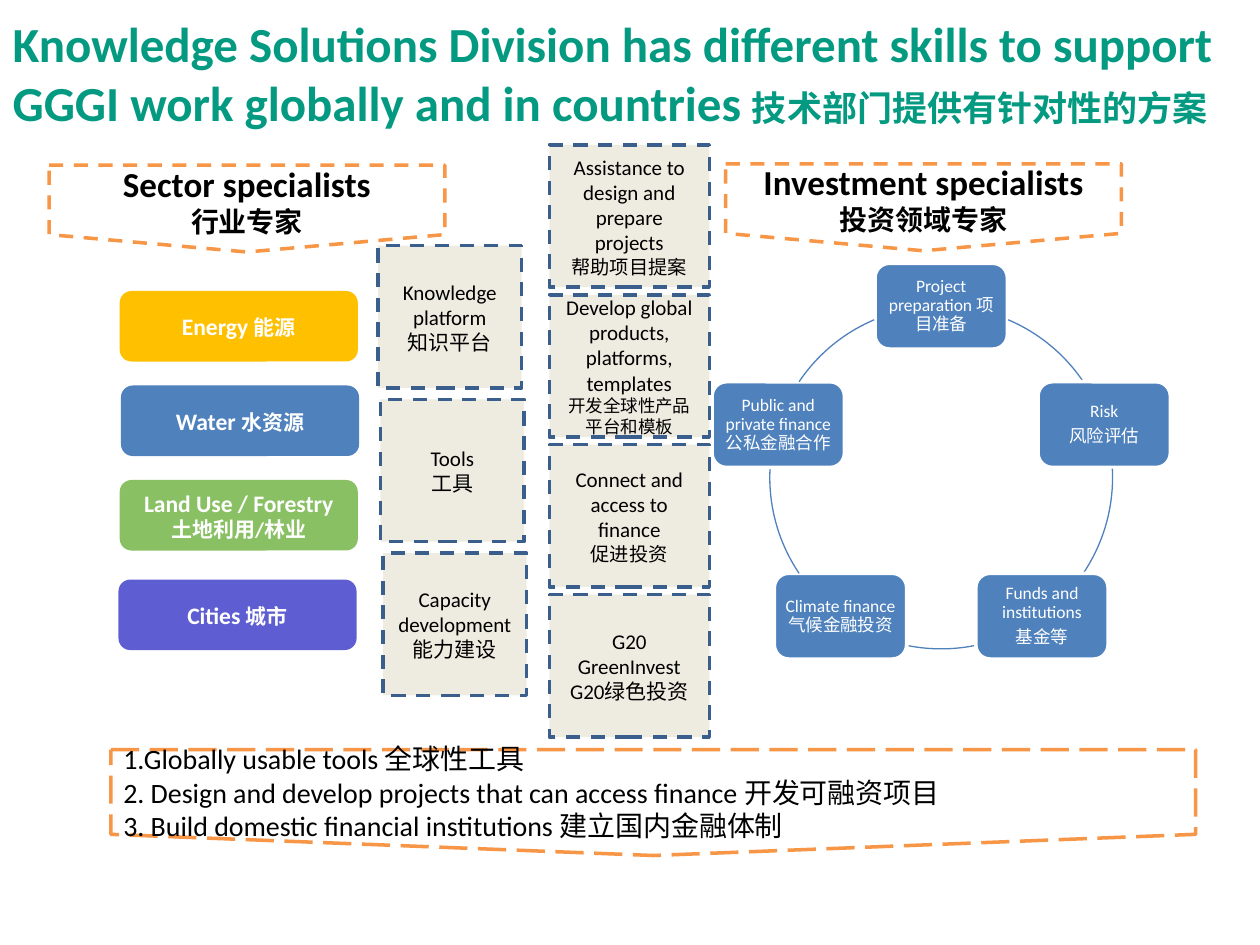
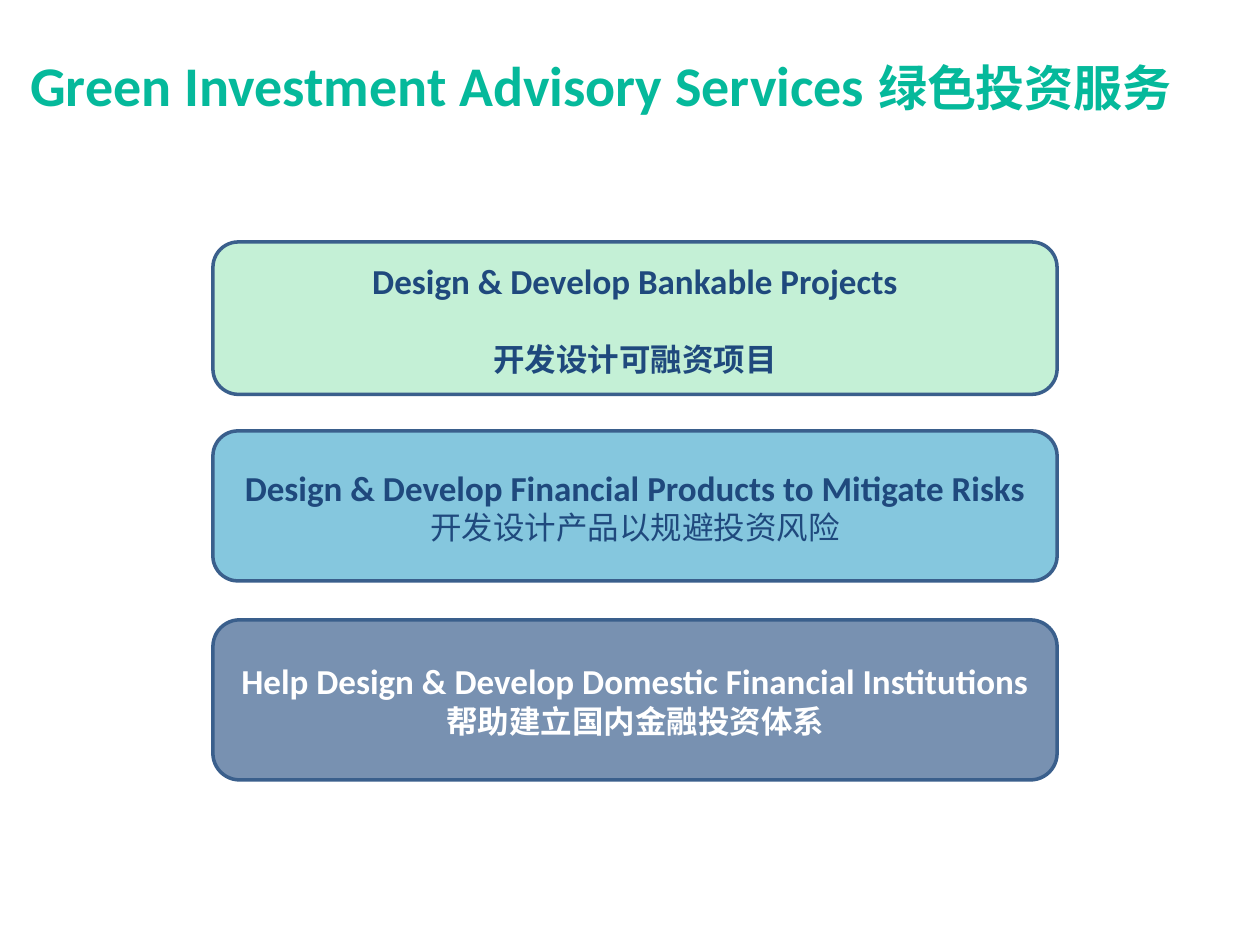
from math import cos, radians, sin

from lxml.etree import SubElement
from pptx import Presentation
from pptx.dml.color import RGBColor
from pptx.enum.dml import MSO_LINE
from pptx.enum.shapes import MSO_SHAPE
from pptx.enum.text import MSO_ANCHOR, MSO_AUTO_SIZE, PP_ALIGN
from pptx.oxml.ns import qn
from pptx.util import Inches, Pt

BLACK = RGBColor(0x00, 0x00, 0x00)
WHITE = RGBColor(0xFF, 0xFF, 0xFF)
TEAL = RGBColor(0x04, 0x9A, 0x81)
MINT = RGBColor(0x05, 0xB9, 0x9B)
ORANGE = RGBColor(0xF7, 0x96, 0x46)
BLUE = RGBColor(0x4F, 0x81, 0xBD)
NAVY = RGBColor(0x1F, 0x49, 0x7D)
EDGE = RGBColor(0x3A, 0x5F, 0x8C)
CREAM = RGBColor(0xEE, 0xEC, 0xE1)
AMBER = RGBColor(0xFF, 0xC0, 0x00)
GREEN = RGBColor(0x89, 0xC0, 0x64)
VIOLET = RGBColor(0x5E, 0x5E, 0xD2)
PALE_GREEN = RGBColor(0x9D, 0xE7, 0xBB)
SKY = RGBColor(0x35, 0xA2, 0xC9)

# Text is a list of paragraphs; a paragraph is a list of (text, size, changes) runs.
SKILLS_TITLE = [[
    ("Knowledge Solutions Division has different skills to support "
     "GGGI work globally and in countries ", 28),
    ("技术部门提供有针对性的方案", 20, {"name": "Lato"})]]
ADVISORY_TITLE = [[("Green Investment Advisory Services ", 32), ("绿色投资服务", 28)]]

GOALS = [
    [("1.Globally usable tools 全球性工具", 16)],
    [("2. Design and develop projects that can access finance 开发可融资项目", 16)],
    [("3. Build domestic financial institutions 建立国内金融体制", 16)],
]
SECTORS = [  # left, top, fill, text
    (0.95, 2.31, AMBER, [[("Energy ", 13.5), ("能源", 12)]]),
    (0.96, 3.06, BLUE, [[("Water ", 13.5), ("水资源", 12)]]),
    (0.95, 3.81, GREEN, [[("Land Use / Forestry", 13.5)], [("土地利用/林业", 12)]]),
    (0.94, 4.6, VIOLET, [[("Cities ", 13.5), ("城市", 12)]]),
]
INVESTMENT_RING = [  # clockwise from the top
    ["Project preparation 项目准备"],
    ["Risk", "风险评估"],
    ["Funds and institutions", "基金等"],
    ["Climate finance 气候金融投资"],
    ["Public and private finance公私金融合作"],
]
RING_ARCS = [(293, 326), (357, 34), (79, 101), (146, 183), (214, 247)]
SPECIALISTS = [  # left, top, text
    (0.39, 1.31, "Sector specialists", "行业专家"),
    (5.76, 1.3, "Investment specialists", "投资领域专家"),
]
SERVICES = [
    ("Assistance to design and prepare projects", "帮助项目提案", 11),
    ("Develop global products, platforms, templates", "开发全球性产品平台和模板", 10),
    ("Connect and access to finance", "促进投资", 11),
    ("G20 GreenInvest", "G20绿色投资", 12),
]
TOOLS = [
    ("Knowledge platform", "知识平台", 12),
    ("Tools", "工具", 12),
    ("Capacity development", "能力建设", 12),
]
ADVISORY = [  # top, height, fill, font colour, space before Chinese, text
    (1.92, 1.21, PALE_GREEN, NAVY, 22,
     [[("Design & Develop Bankable Projects", 20)], [("开发设计可融资项目", 18)]]),
    (3.42, 1.19, SKY, NAVY, 0,
     [[("Design & Develop Financial Products to Mitigate Risks", 20)],
      [("开发设计产品以规避投资风险", 18, {"bold": False})]]),
    (4.92, 1.27, NAVY, WHITE, 0,
     [[("Help Design & Develop Domestic Financial Institutions", 20)],
      [("帮助建立国内金融投资体系", 18)]]),
]


def write(tf, paras, color, bold=False, align=PP_ALIGN.CENTER, **spacing):
    tf.word_wrap = True
    for i, runs in enumerate(paras):
        p = tf.add_paragraph() if i else tf.paragraphs[0]
        p.alignment = align
        for name, value in spacing.items():
            if i or name != "space_before":
                setattr(p, name, value)
        for text, size, *changes in runs:
            r = p.add_run()
            r.text = text
            font = {"name": "Calibri", "size": Pt(size), "bold": bold}
            for name, value in (font | (changes[0] if changes else {})).items():
                setattr(r.font, name, value)
            r.font.color.rgb = color


def add_title(slide, box, paras, color, align):
    sp = slide.shapes.title
    sp.left, sp.top, sp.width, sp.height = map(Inches, box)
    sp.text_frame.auto_size = MSO_AUTO_SIZE.NONE
    sp.text_frame.vertical_anchor = MSO_ANCHOR.TOP
    write(sp.text_frame, paras, color, True, align)


def add_box(slide, kind, box, fill=None, line=None, width=2, dash=None, opacity=None):
    """Add a preset shape; opacity is a percentage of the fill."""
    sp = slide.shapes.add_shape(kind, *map(Inches, box))
    sp.shadow.inherit = False
    if fill is None:
        sp.fill.background()
    else:
        sp.fill.solid()
        sp.fill.fore_color.rgb = fill
    if opacity:
        color = sp._element.spPr.find(qn("a:solidFill"))[0]
        SubElement(color, qn("a:alpha"), val=str(opacity * 1000))
    if line is None:
        sp.line.fill.background()
    else:
        sp.line.color.rgb = line
        sp.line.width = Pt(width)
        if dash:
            sp.line.dash_style = dash
    sp.text_frame.vertical_anchor = MSO_ANCHOR.MIDDLE
    return sp


def add_stack(slide, left, top, width, step, shift, cards):
    for i, (english, chinese, size) in enumerate(cards):
        sp = add_box(slide, MSO_SHAPE.RECTANGLE,
                     (left + i * shift, top + i * step, width, 1.13),
                     CREAM, EDGE, dash=MSO_LINE.DASH)
        write(sp.text_frame, [[(english, 12)], [(chinese, size)]], BLACK)


def add_ring(slide, cx=7.47, cy=3.79, radius=1.36, width=1.05, height=0.68):
    for i, (labels, arc) in enumerate(zip(INVESTMENT_RING, RING_ARCS)):
        angle = radians(360 / len(INVESTMENT_RING) * i - 90)
        x, y = cx + radius * cos(angle), cy + radius * sin(angle)
        sp = add_box(slide, MSO_SHAPE.ROUNDED_RECTANGLE,
                     (x - width / 2, y - height / 2, width, height), BLUE, WHITE)
        tf = sp.text_frame
        for side in ("left", "top", "right", "bottom"):
            setattr(tf, f"margin_{side}", Inches(0.05))
        write(tf, [[(label, 10)] for label in labels], WHITE,
              line_spacing=0.9, space_after=Pt(3.5))
        sp = add_box(slide, MSO_SHAPE.ARC,
                     (cx - radius, cy - radius, 2 * radius, 2 * radius),
                     line=BLUE, width=0.75)
        for end, degrees in enumerate(arc):
            # Arc angles are 60000ths of a degree, adjustments 100000ths
            sp.adjustments[end] = degrees * 0.6


def build_skills(slide):
    add_title(slide, (0, 0.06, 10, 0.78), SKILLS_TITLE, TEAL, PP_ALIGN.LEFT)
    banner = MSO_SHAPE.FLOWCHART_OFFPAGE_CONNECTOR
    sp = add_box(slide, banner, (0.88, 5.95, 8.61, 0.84), WHITE, ORANGE,
                 dash=MSO_LINE.LONG_DASH)
    write(sp.text_frame, GOALS, BLACK, align=PP_ALIGN.LEFT)
    for left, top, fill, paras in SECTORS:
        sp = add_box(slide, MSO_SHAPE.ROUNDED_RECTANGLE, (left, top, 1.89, 0.56), fill)
        write(sp.text_frame, paras, WHITE, True)
    add_ring(slide)
    for left, top, english, chinese in SPECIALISTS:
        sp = add_box(slide, banner, (left, top, 3.14, 0.69), WHITE, ORANGE,
                     dash=MSO_LINE.DASH)
        write(sp.text_frame, [[(english, 20)], [(chinese, 16)]], BLACK, True)
    add_stack(slide, 4.36, 1.15, 1.27, 1.19, 0, SERVICES)
    add_stack(slide, 3, 1.95, 1.14, 1.22, 0.02, TOOLS)


def build_advisory(slide):
    add_title(slide, (0.14, 0.35, 9.9, 0.64), ADVISORY_TITLE, MINT, PP_ALIGN.JUSTIFY)
    for top, height, fill, color, gap, paras in ADVISORY:
        sp = add_box(slide, MSO_SHAPE.ROUNDED_RECTANGLE, (1.69, top, 6.7, height),
                     fill, EDGE, opacity=60)
        write(sp.text_frame, paras, color, True, space_before=Pt(gap))


def main():
    prs = Presentation()
    prs.slide_width, prs.slide_height = Inches(10), Inches(7.5)
    title_only = prs.slide_layouts[5]
    for build in (build_skills, build_advisory):
        build(prs.slides.add_slide(title_only))
    prs.save("out.pptx")


if __name__ == "__main__":
    main()
